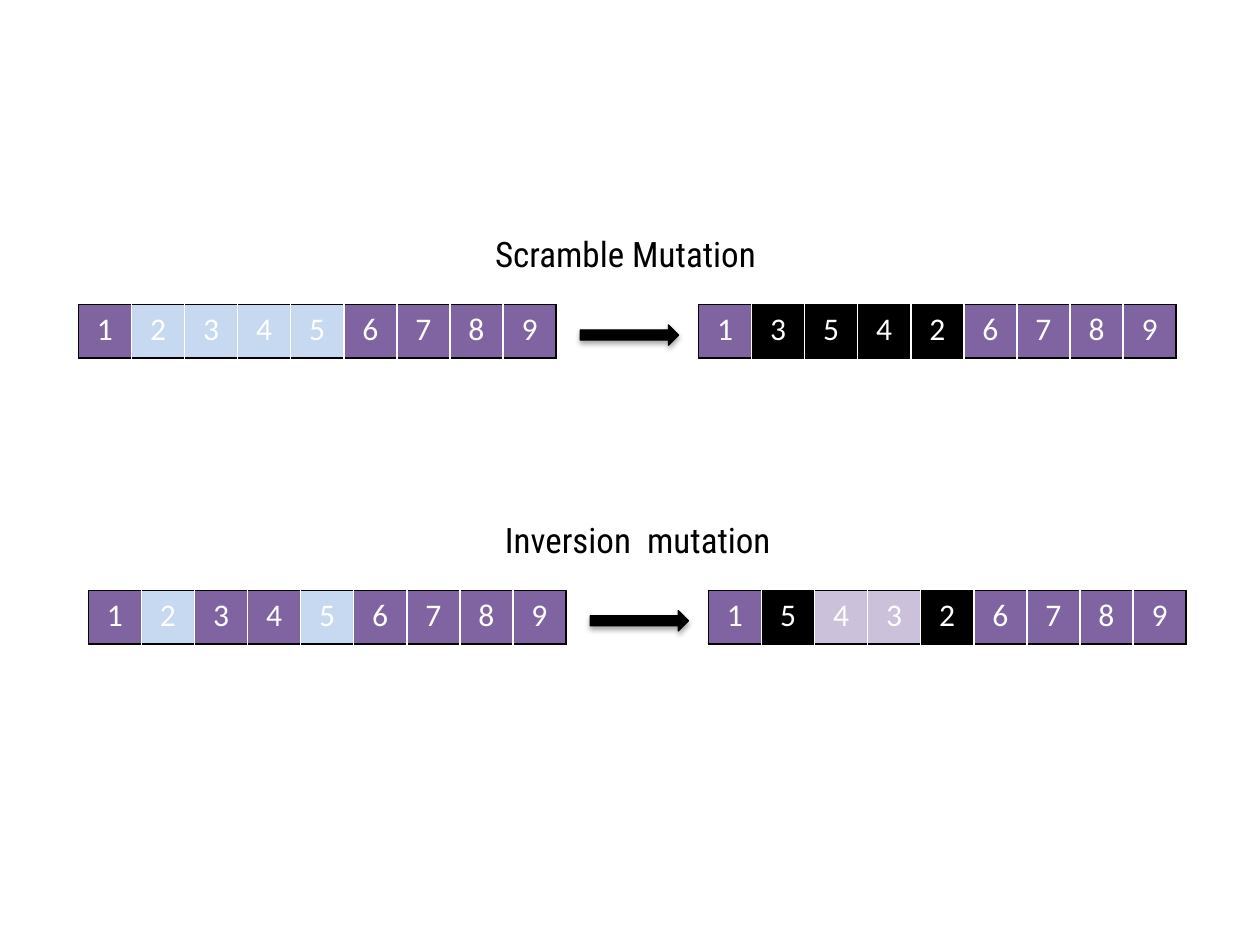
from lxml.etree import SubElement
from pptx import Presentation
from pptx.dml.color import RGBColor
from pptx.enum.shapes import MSO_SHAPE as Preset
from pptx.enum.text import MSO_AUTO_SIZE as AutoSize, PP_ALIGN as Align
from pptx.oxml.ns import qn
from pptx.util import Cm, Pt

COLORS = {
    "white": "FFFFFF",
    "black": "000000",
    "gene": "8064A2",
    "selected": "C6D9F1",
    "inverted": "CCC1DA",
}
# One letter per gene in the fill patterns below
FILLS = {"g": "gene", "s": "selected", "b": "black", "i": "inverted"}

GENE_WIDTH, GENE_HEIGHT = 1.07, 1.08
OFFSPRING_DX = 12.5
ARROW_DX, ARROW_DY = 10.12, 0.41
CAPTION_DX, CAPTION_DY = 8.15, -1.58


def rgb(name):
    return RGBColor.from_string(COLORS[name])


class MutationSlide:
    gene_font = {"name": "Calibri", "size": Pt(18), "bold": False}
    caption_font = {"name": "Roboto Condensed", "size": Pt(20)}

    def __init__(self, slide):
        self.slide = slide

    def add_text(self, paragraph, text, font_format, color):
        run = paragraph.add_run()
        run.text = text
        for attribute, value in font_format.items():
            setattr(run.font, attribute, value)
        run.font.color.rgb = rgb(color)

    def caption(self, left, top, text):
        box = self.slide.shapes.add_textbox(Cm(left), Cm(top), Cm(6.93), Cm(1.12))
        frame = box.text_frame
        frame.word_wrap = True
        frame.auto_size = AutoSize.SHAPE_TO_FIT_TEXT
        self.add_text(frame.paragraphs[0], text, self.caption_font, "black")

    def border(self, cell, side, color):
        line = SubElement(cell._tc.get_or_add_tcPr(), qn(f"a:ln{side}"), w=str(Pt(1)))
        fill = SubElement(line, qn("a:solidFill"))
        SubElement(fill, qn("a:srgbClr"), val=COLORS[color])

    def chromosome(self, left, top, genes, pattern):
        count = len(genes)
        table = self.slide.shapes.add_table(
            1, count, Cm(left), Cm(top), Cm(GENE_WIDTH * count), Cm(GENE_HEIGHT)
        ).table
        table.first_row = table.horz_banding = False
        for index, (gene, key) in enumerate(zip(genes, pattern)):
            table.columns[index].width = Cm(GENE_WIDTH)
            cell = table.cell(0, index)
            # Black outline, white separators between genes
            self.border(cell, "L", "black" if index == 0 else "white")
            self.border(cell, "R", "black" if index == count - 1 else "white")
            self.border(cell, "T", "black")
            self.border(cell, "B", "black")
            cell.fill.solid()
            cell.fill.fore_color.rgb = rgb(FILLS[key])
            paragraph = cell.text_frame.paragraphs[0]
            paragraph.alignment = Align.CENTER
            self.add_text(paragraph, gene, self.gene_font, "white")

    def arrow(self, left, top):
        arrow = self.slide.shapes.add_shape(
            Preset.RIGHT_ARROW, Cm(left), Cm(top), Cm(1.98), Cm(0.41)
        )
        arrow.fill.solid()
        arrow.fill.fore_color.rgb = rgb("black")
        arrow.line.color.rgb = rgb("black")
        arrow.line.width = Pt(0.75)
        # Soft shadow straight below
        arrow.shadow.inherit = False
        effects = arrow._element.spPr.find(qn("a:effectLst"))
        shadow = SubElement(
            effects, qn("a:outerShdw"), blurRad=str(Pt(3.1)), dist=str(Pt(1.8)),
            dir="5400000", rotWithShape="0",
        )
        color = SubElement(shadow, qn("a:srgbClr"), val=COLORS["black"])
        SubElement(color, qn("a:alpha"), val="35000")

    def mutation(self, left, top, title, parent, offspring):
        self.chromosome(left, top, *parent)
        self.arrow(left + ARROW_DX, top + ARROW_DY)
        self.chromosome(left + OFFSPRING_DX, top, *offspring)
        self.caption(left + CAPTION_DX, top + CAPTION_DY, title)


def main():
    presentation = Presentation()
    presentation.slide_width, presentation.slide_height = Cm(25.4), Cm(19.05)
    blank = presentation.slide_layouts[6]
    page = MutationSlide(presentation.slides.add_slide(blank))

    # Each chromosome: gene order and fill pattern
    page.mutation(1.58, 6.14, "Scramble Mutation",
                  ("123456789", "gssssgggg"), ("135426789", "gbbbbgggg"))
    page.mutation(1.78, 11.9, "Inversion  mutation",
                  ("123456789", "gsggsgggg"), ("154326789", "gbiibgggg"))

    presentation.save("out.pptx")


if __name__ == "__main__":
    main()
